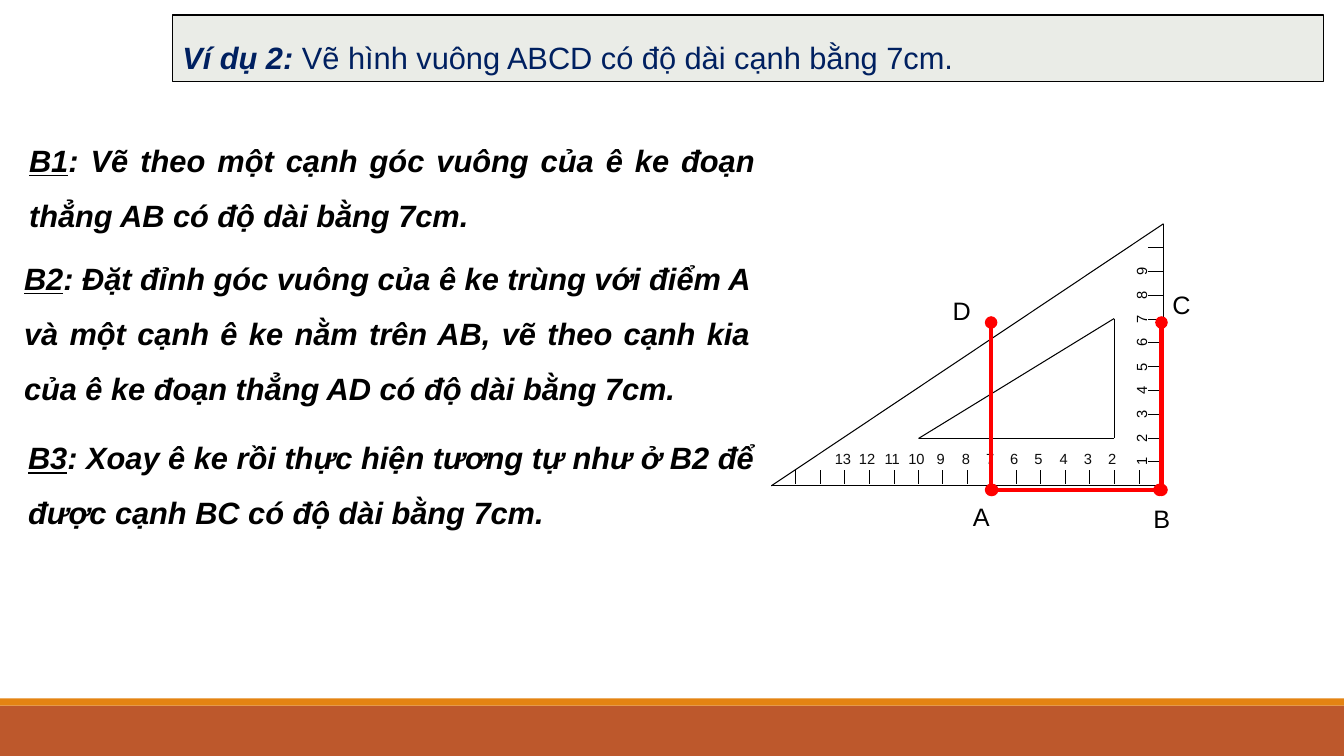
from dataclasses import dataclass
from typing import Any, NamedTuple

from lxml.etree import SubElement
from pptx import Presentation
from pptx.dml.color import RGBColor
from pptx.enum.shapes import MSO_CONNECTOR as Connector, MSO_SHAPE as Preset
from pptx.enum.text import MSO_ANCHOR as Anchor, MSO_AUTO_SIZE as AutoSize, PP_ALIGN as Align
from pptx.oxml.ns import qn
from pptx.util import Emu, Pt

EMU_PER_PX = 9144


@dataclass(frozen=True)
class Theme:
    font: str = "Arial"
    ink: str = "000000"
    scale_ink: str = "0D0D0D"
    heading: str = "002060"
    heading_fill: str = "EAECE7"
    red: str = "FF0000"
    orange: str = "E48312"
    rust: str = "BD582C"
    body_size: float = 22
    point_size: float = 18
    scale_size: float = 10.5
    thin: float = 0.75
    border: float = 1
    thick: float = 3


THEME = Theme()


class Point(NamedTuple):
    x: int
    y: int


class Box(NamedTuple):
    left: int
    top: int
    width: int
    height: int


class Run(NamedTuple):
    text: str
    strong: bool = False
    underline: bool = False


class Step(NamedTuple):
    name: str
    text: str
    box: Box


class PointLabel(NamedTuple):
    name: str
    box: Box


STEPS = [
    Step("B3", ": Xoay ê ke rồi thực hiện tương tự như ở B2 để được cạnh BC có độ dài bằng 7cm.",
         Box(18, 412, 740, 121)),
    Step("B1", ": Vẽ theo một cạnh góc vuông của ê ke đoạn thẳng AB có độ dài bằng 7cm.",
         Box(19, 117, 740, 121)),
    Step("B2", ": Đặt đỉnh góc vuông của ê ke trùng với điểm A và một cạnh ê ke nằm trên AB, "
               "vẽ theo cạnh kia của ê ke đoạn thẳng AD có độ dài bằng 7cm.",
         Box(14, 234, 740, 177)),
]
POINT_LABELS = [
    PointLabel("A", Box(955, 492, 40, 40)),
    PointLabel("B", Box(1134, 494, 40, 40)),
    PointLabel("C", Box(1153, 282, 40, 40)),
    PointLabel("D", Box(935, 288, 40, 40)),
]
HEADING = [Run("Ví dụ 2: ", strong=True), Run("Vẽ hình vuông ABCD có độ dài cạnh bằng 7cm.")]
HEADING_BOX = Box(171, 15, 1142, 66)
FOOTER_BARS = [(Box(0, 700, 1333, 50), THEME.rust), (Box(0, 693, 1333, 7), THEME.orange)]

CORNER = Point(1154, 482)
OUTER_TRIANGLE = [Point(765, 482), CORNER, Point(1154, 222)]
INNER_TRIANGLE = [Point(911, 435), Point(1105, 435), Point(1105, 316)]
BASE_PITCH = (CORNER.x - OUTER_TRIANGLE[0].x) / 16
SIDE_PITCH = (CORNER.y - OUTER_TRIANGLE[2].y) / 11
NUMBER_SIDE = 24
SQUARE_SIDES = [
    (Point(984, 486), Point(1150, 486)),
    (Point(983, 486), Point(983, 320)),
    (Point(1152, 486), Point(1152, 320)),
]


def px(length: int) -> Emu:
    return Emu(length * EMU_PER_PX)


def rgb(color: str) -> RGBColor:
    return RGBColor.from_string(color)


def write_text(shape: Any, runs: list[Run], *, size: float, color: str, align: Align = Align.LEFT,
               line_spacing: float = 1, space: float = 0, tight: bool = False) -> None:
    frame = shape.text_frame
    frame.word_wrap = True
    frame.auto_size = AutoSize.NONE
    frame.vertical_anchor = Anchor.MIDDLE if tight else Anchor.TOP
    if tight:
        frame.margin_left = frame.margin_right = frame.margin_top = frame.margin_bottom = 0
    paragraph = frame.paragraphs[0]
    paragraph.alignment = align
    paragraph.line_spacing = line_spacing
    paragraph.space_before = paragraph.space_after = Pt(space)
    for run in runs:
        text_run = paragraph.add_run()
        text_run.text = run.text
        font = text_run.font
        font.name, font.size = THEME.font, Pt(size)
        font.color.rgb = rgb(color)
        font.bold = font.italic = run.strong
        font.underline = run.underline


def add_text(shapes: Any, box: Box, runs: list[Run], **text_format: Any) -> Any:
    shape = shapes.add_textbox(*map(px, box))
    write_text(shape, runs, **text_format)
    return shape


def add_rectangle(shapes: Any, box: Box, fill: str, border: str | None = None) -> Any:
    shape = shapes.add_shape(Preset.RECTANGLE, *map(px, box))
    shape.shadow.inherit = False
    shape.fill.solid()
    shape.fill.fore_color.rgb = rgb(fill)
    if border:
        shape.line.color.rgb = rgb(border)
        shape.line.width = Pt(THEME.border)
    else:
        shape.line.fill.background()
    return shape


def add_line(shapes: Any, start: Point, end: Point, color: str = THEME.ink,
             width: float = THEME.thin, dots: bool = False) -> None:
    connector = shapes.add_connector(Connector.STRAIGHT, *map(px, (*start, *end)))
    connector.line.color.rgb = rgb(color)
    connector.line.width = Pt(width)
    properties = connector._element.spPr
    SubElement(properties, qn("a:effectLst"))
    if dots:
        for end_name in ("a:headEnd", "a:tailEnd"):
            SubElement(properties.find(qn("a:ln")), qn(end_name), type="oval")


def add_number(shapes: Any, number: int, center: Point, color: str, rotation: int = 0) -> None:
    half = NUMBER_SIDE // 2
    box = Box(center.x - half, center.y - half, NUMBER_SIDE, NUMBER_SIDE)
    label = add_text(shapes, box, [Run(str(number))], size=THEME.scale_size, color=color,
                     align=Align.CENTER, tight=True)
    label.rotation = rotation


def draw_set_square(shapes: Any) -> None:
    for corners in (OUTER_TRIANGLE, INNER_TRIANGLE):
        for start, end in zip(corners, corners[1:] + corners[:1]):
            add_line(shapes, start, end)
    for number in range(1, 11):
        y = round(CORNER.y - number * SIDE_PITCH)
        add_line(shapes, Point(CORNER.x, y), Point(CORNER.x - 15, y))
        if number <= 9:
            add_number(shapes, number, Point(CORNER.x - 22, y), THEME.ink, rotation=270)
    for number in range(1, 16):
        x = round(CORNER.x - number * BASE_PITCH)
        add_line(shapes, Point(x, CORNER.y - 2), Point(x, CORNER.y - 16))
        if 2 <= number <= 13:
            add_number(shapes, number, Point(x - 2, CORNER.y - 27), THEME.scale_ink)


def main() -> None:
    presentation = Presentation()
    presentation.slide_width, presentation.slide_height = px(1333), px(750)
    slide = presentation.slides.add_slide(presentation.slide_layouts[6])
    shapes = slide.shapes

    for box, fill in FOOTER_BARS:
        add_rectangle(shapes, box, fill)
    draw_set_square(shapes.add_group_shape().shapes)
    for start, end in SQUARE_SIDES:
        add_line(shapes, start, end, THEME.red, THEME.thick, dots=True)
    for label in POINT_LABELS:
        add_text(shapes, label.box, [Run(label.name)], size=THEME.point_size, color=THEME.ink)
    heading = add_rectangle(shapes, HEADING_BOX, THEME.heading_fill, border=THEME.ink)
    write_text(heading, HEADING, size=THEME.body_size, color=THEME.heading,
               align=Align.JUSTIFY, line_spacing=1.5)
    for step in STEPS:
        runs = [Run(step.name, strong=True, underline=True), Run(step.text, strong=True)]
        add_text(shapes, step.box, runs, size=THEME.body_size, color=THEME.ink,
                 align=Align.JUSTIFY, line_spacing=1.5, space=6)
    presentation.save("out.pptx")


if __name__ == "__main__":
    main()
